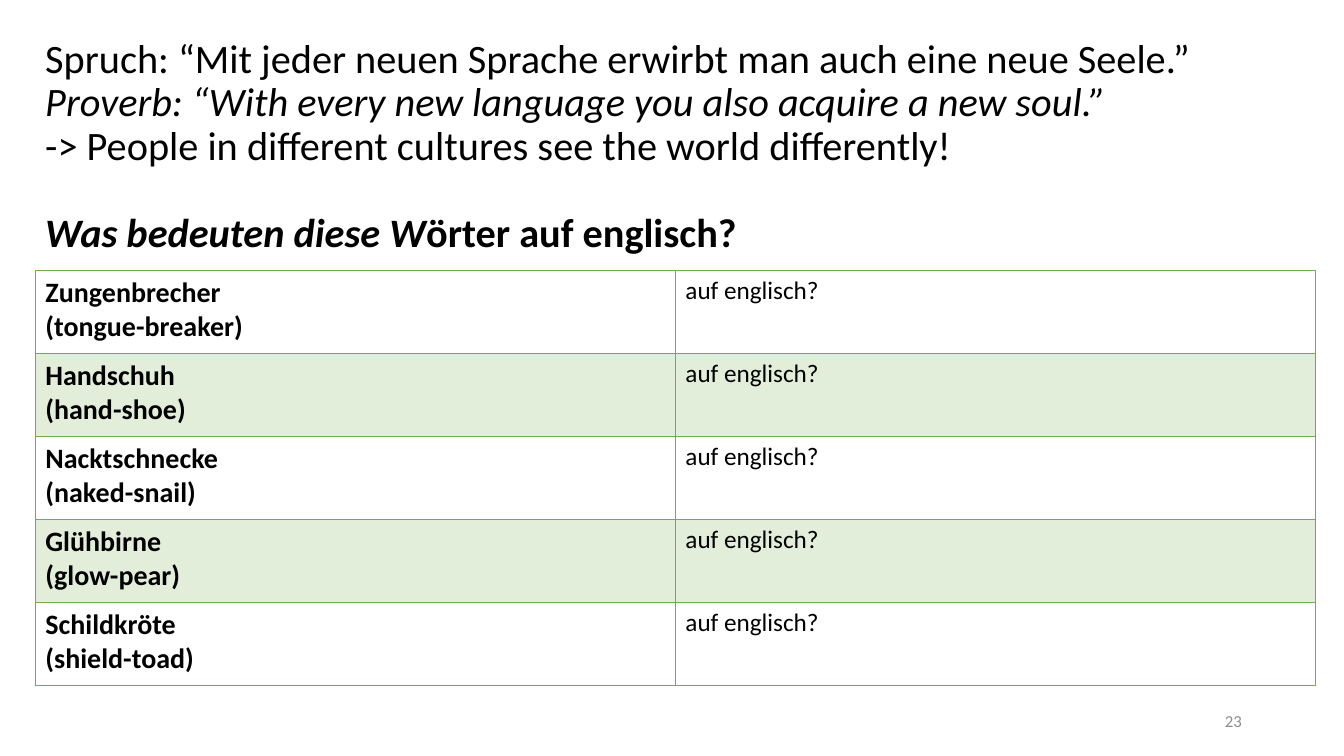
from dataclasses import dataclass
from typing import NamedTuple

from lxml import etree
from pptx import Presentation
from pptx import util as u
from pptx.dml import color
from pptx.enum import text
from pptx.oxml import ns


@dataclass(frozen=True)
class Theme:
    font: str = "Calibri"
    ink: str = "000000"
    muted: str = "8C8C8C"
    green: str = "70AD47"
    band_alpha: int = 20
    border: float = 1
    heading: float = 28.8
    word: float = 20
    prompt: float = 18
    page: float = 12


class Span(NamedTuple):
    words: str
    bold: bool = False
    italic: bool = False


class Line(NamedTuple):
    spans: list[Span]
    gap_before: float = 0


class Compound(NamedTuple):
    german: str
    literal: str


THEME = Theme()

HEADING = [
    Line([Span("Spruch: “Mit jeder neuen Sprache erwirbt man auch eine neue Seele.”")]),
    Line([Span("Proverb: “With every new language you also acquire a new soul.”", italic=True)]),
    Line([Span("-> People in different cultures see the world differently!")]),
    Line([Span("Was bedeuten diese W", bold=True, italic=True),
          Span("örter auf englisch?", bold=True)], gap_before=31.6),
]

COMPOUNDS = [
    Compound("Zungenbrecher", "tongue-breaker"),
    Compound("Handschuh", "hand-shoe"),
    Compound("Nacktschnecke", "naked-snail"),
    Compound("Glühbirne", "glow-pear"),
    Compound("Schildkröte", "shield-toad"),
]
PROMPT = "auf englisch?"


def style(font, size: float, ink: str = THEME.ink, bold: bool = False) -> None:
    font.name = THEME.font
    font.size = u.Pt(size)
    font.bold = bold
    font.color.rgb = color.RGBColor.from_string(ink)


def add_frame(slide, left: float, top: float, width: float, height: float,
              anchor: text.MSO_ANCHOR):
    box = slide.shapes.add_textbox(u.Cm(left), u.Cm(top), u.Cm(width), u.Cm(height))
    frame = box.text_frame
    frame.word_wrap = True
    frame.vertical_anchor = anchor
    return frame


def add_heading(slide, lines: list[Line]) -> None:
    frame = add_frame(slide, 0.89, 0.84, 31.39, 5.8, text.MSO_ANCHOR.TOP)
    for index, line in enumerate(lines):
        paragraph = frame.add_paragraph() if index else frame.paragraphs[0]
        paragraph.line_spacing = 0.9
        paragraph.space_before = u.Pt(line.gap_before)
        style(paragraph.font, THEME.heading)
        for span in line.spans:
            run = paragraph.add_run()
            run.text = span.words
            run.font.bold = span.bold
            run.font.italic = span.italic


def add_borders(cell) -> None:
    properties = cell._tc.get_or_add_tcPr()
    for side in ("a:lnL", "a:lnR", "a:lnT", "a:lnB"):
        edge = etree.SubElement(properties, ns.qn(side), w=str(u.Pt(THEME.border)))
        fill = etree.SubElement(edge, ns.qn("a:solidFill"))
        etree.SubElement(fill, ns.qn("a:srgbClr"), val=THEME.green)


def fill_cell(cell, words: str, size: float, bold: bool, banded: bool) -> None:
    cell.text = words
    for paragraph in cell.text_frame.paragraphs:
        style(paragraph.font, size, bold=bold)
    add_borders(cell)
    if not banded:
        cell.fill.background()
        return
    cell.fill.solid()
    cell.fill.fore_color.rgb = color.RGBColor.from_string(THEME.green)
    tint = cell._tc.tcPr.find(ns.qn("a:solidFill"))[0]
    etree.SubElement(tint, ns.qn("a:alpha"), val=str(THEME.band_alpha * 1000))


def add_vocabulary(slide, compounds: list[Compound]) -> None:
    frame = slide.shapes.add_table(len(compounds), 2, u.Cm(0.89), u.Cm(6.81),
                                   u.Cm(32.26), u.Cm(10.46))
    vocabulary = frame.table
    vocabulary.first_row = False
    vocabulary.horz_banding = False
    for row, compound in enumerate(compounds):
        banded = row % 2 == 1
        fill_cell(vocabulary.cell(row, 0), f"{compound.german}\n({compound.literal})",
                  THEME.word, True, banded)
        fill_cell(vocabulary.cell(row, 1), PROMPT, THEME.prompt, False, banded)


def add_page_number(slide, number: int) -> None:
    frame = add_frame(slide, 23.93, 17.65, 7.62, 1.02, text.MSO_ANCHOR.MIDDLE)
    paragraph = frame.paragraphs[0]
    paragraph.text = str(number)
    paragraph.alignment = text.PP_ALIGN.RIGHT
    style(paragraph.font, THEME.page, THEME.muted)


def main() -> None:
    deck = Presentation()
    deck.slide_width, deck.slide_height = u.Cm(33.87), u.Cm(19.05)
    slide = deck.slides.add_slide(deck.slide_layouts[6])

    # Proverb and question
    add_heading(slide, HEADING)
    # Words to translate
    add_vocabulary(slide, COMPOUNDS)
    # Footer
    add_page_number(slide, 23)

    deck.save("out.pptx")


if __name__ == "__main__":
    main()
